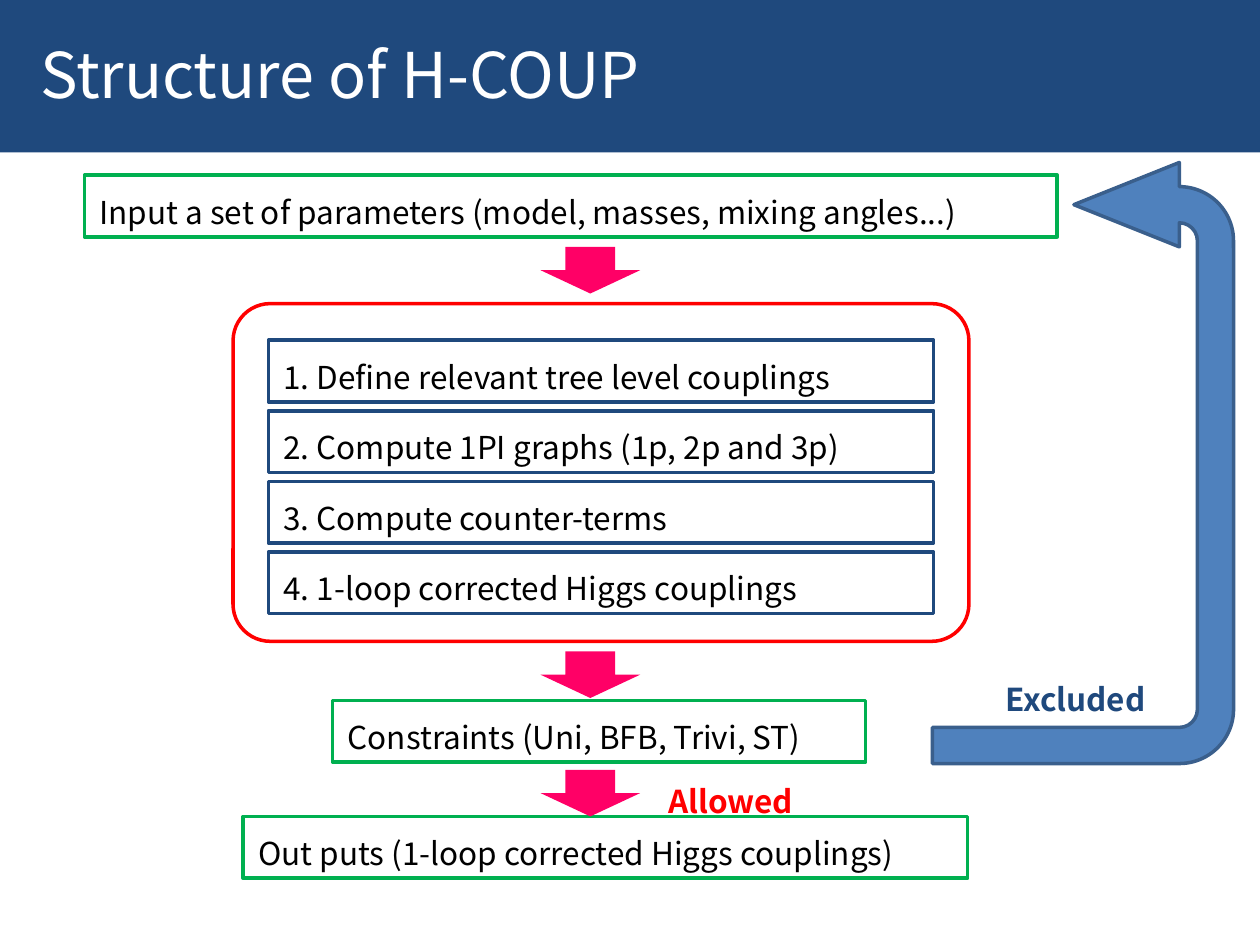
from dataclasses import dataclass

from pptx import Presentation
from pptx.dml.color import RGBColor
from pptx.enum.shapes import MSO_SHAPE as Shape
from pptx.enum.text import MSO_ANCHOR as Anchor, MSO_AUTO_SIZE as AutoSize, PP_ALIGN as Align
from pptx.util import Inches, Pt

COLUMNS, ROWS = 100, 75
CELL = Inches(0.1)
STEP_ROWS = 4.9
ARROW_COLUMNS, ARROW_ROWS = 7.9, 3.7


@dataclass(frozen=True)
class Theme:
    font: str = "Noto Sans CJK JP"
    title_size: int = 36
    body_size: int = 18
    line_width: int = 2
    navy: str = "1F497D"
    white: str = "FFFFFF"
    black: str = "000000"
    green: str = "00B050"
    red: str = "FF0000"
    pink: str = "FF0066"
    blue: str = "4F81BD"
    blue_edge: str = "3A5F8C"


@dataclass(frozen=True)
class Box:
    """An area measured in grid columns and rows."""
    left: float
    top: float
    width: float
    height: float

    def area(self, column, row, width, height):
        return Box(self.left + column, self.top + row, width, height)

    def turned(self):
        """The box that covers this one after a quarter turn."""
        shift = (self.width - self.height) / 2
        return Box(self.left + shift, self.top - shift, self.height, self.width)

    def lengths(self):
        return [round(value * CELL) for value in (self.left, self.top, self.width, self.height)]


THEME = Theme()


def set_format(target, values):
    for name, value in values.items():
        setattr(target, name, value)


def add_outline(slide, kind, box, fill=None, line=None):
    shape = slide.shapes.add_shape(kind, *box.lengths())
    shape.shadow.inherit = False
    if fill:
        shape.fill.solid()
        shape.fill.fore_color.rgb = RGBColor.from_string(fill)
    else:
        shape.fill.background()
    if line:
        shape.line.color.rgb = RGBColor.from_string(line)
        shape.line.width = Pt(THEME.line_width)
    else:
        shape.line.fill.background()
    return shape


def write_text(shape, text, color, frame_format, paragraph_format, size=THEME.body_size, bold=False):
    frame = shape.text_frame
    set_format(frame, frame_format)
    paragraph = frame.paragraphs[0]
    set_format(paragraph, paragraph_format)
    run = paragraph.add_run()
    run.text = text
    set_format(run.font, {"name": THEME.font, "size": Pt(size), "bold": bold})
    run.font.color.rgb = RGBColor.from_string(color)


def add_step(slide, box, text, line):
    shape = add_outline(slide, Shape.RECTANGLE, box, line=line)
    write_text(
        shape, text, THEME.black,
        {"word_wrap": True, "auto_size": AutoSize.SHAPE_TO_FIT_TEXT, "vertical_anchor": Anchor.TOP,
         "margin_left": Inches(0.12), "margin_right": Inches(0.12),
         "margin_top": Inches(0.05), "margin_bottom": Inches(0.05)},
        {"alignment": Align.LEFT, "line_spacing": 1.3})


def add_label(slide, box, text, color):
    label = slide.shapes.add_textbox(*box.lengths())
    write_text(
        label, text, color,
        {"word_wrap": False, "auto_size": AutoSize.SHAPE_TO_FIT_TEXT},
        {"alignment": Align.CENTER, "line_spacing": 1.5}, bold=True)


def add_flow_arrow(slide, box, column, row):
    add_outline(slide, Shape.DOWN_ARROW, box.area(column, row, ARROW_COLUMNS, ARROW_ROWS), fill=THEME.pink)


# Title banner across the top
def add_title(slide, box, text):
    banner = add_outline(slide, Shape.RECTANGLE, box, fill=THEME.navy)
    write_text(
        banner, text, THEME.white,
        {"word_wrap": True, "vertical_anchor": Anchor.MIDDLE, "margin_left": Inches(0.32)},
        {"alignment": Align.LEFT}, size=THEME.title_size)


# Input step with the arrow below it
def add_input(slide, box):
    add_step(slide, box.area(0, 0, box.width, STEP_ROWS),
             "Input a set of parameters (model, masses, mixing angles...)", THEME.green)
    add_flow_arrow(slide, box, 36.2, box.height - ARROW_ROWS)


# Numbered steps inside a rounded frame
def add_calculation(slide, box, steps):
    side, first_row, pitch = 2.8, 2.9, 5.6
    for index, text in enumerate(steps):
        step_box = box.area(side, first_row + index * pitch, box.width - 2 * side, STEP_ROWS)
        add_step(slide, step_box, f"{index + 1}. {text}", THEME.navy)
    frame = add_outline(slide, Shape.ROUNDED_RECTANGLE, box, line=THEME.red)
    frame.adjustments[0] = 0.11


# Constraints step with the arrow above it
def add_constraints(slide, box):
    add_step(slide, box.area(0, box.height - STEP_ROWS, box.width, STEP_ROWS),
             "Constraints (Uni, BFB, Trivi, ST)", THEME.green)
    add_flow_arrow(slide, box, 16.5, 0)


# Arrow from the constraints back to the input
def add_return_loop(slide, box):
    arrow = add_outline(slide, Shape.U_TURN_ARROW, box.turned(), fill=THEME.blue, line=THEME.blue_edge)
    for index, value in enumerate((0.12, 0.14, 0.35, 0.27, 0.53)):
        arrow.adjustments[index] = value
    arrow.rotation = 90
    arrow._element.spPr.xfrm.set("flipH", "1")
    add_label(slide, box.area(4.3, 39.1, 14.1, 5.6), "Excluded", THEME.navy)


# Output step with its arrow and label
def add_output(slide, box):
    add_step(slide, box.area(0, box.height - STEP_ROWS, box.width, STEP_ROWS),
             "Out puts (1-loop corrected Higgs couplings)", THEME.green)
    add_flow_arrow(slide, box, 23.6, 1)
    add_label(slide, box.area(32.4, 0, 12.6, 5.2), "Allowed", THEME.red)


def main():
    presentation = Presentation()
    set_format(presentation, {"slide_width": COLUMNS * CELL, "slide_height": ROWS * CELL})
    slide = presentation.slides.add_slide(presentation.slide_layouts[6])

    add_title(slide, Box(0, -0.4, COLUMNS, 12.5), "Structure of H-COUP")
    add_calculation(slide, Box(18.5, 24.1, 58.4, 26.8), (
        "Define relevant tree level couplings",
        "Compute 1PI graphs (1p, 2p and 3p)",
        "Compute counter-terms",
        "1-loop corrected Higgs couplings",
    ))
    add_input(slide, Box(6.7, 13.9, 77.2, 9.4))
    add_constraints(slide, Box(26.4, 51.7, 42.3, 8.8))
    add_return_loop(slide, Box(74, 12.9, 23.9, 47.7))
    add_output(slide, Box(19.3, 60.1, 57.5, 9.6))

    presentation.save("out.pptx")


if __name__ == "__main__":
    main()
